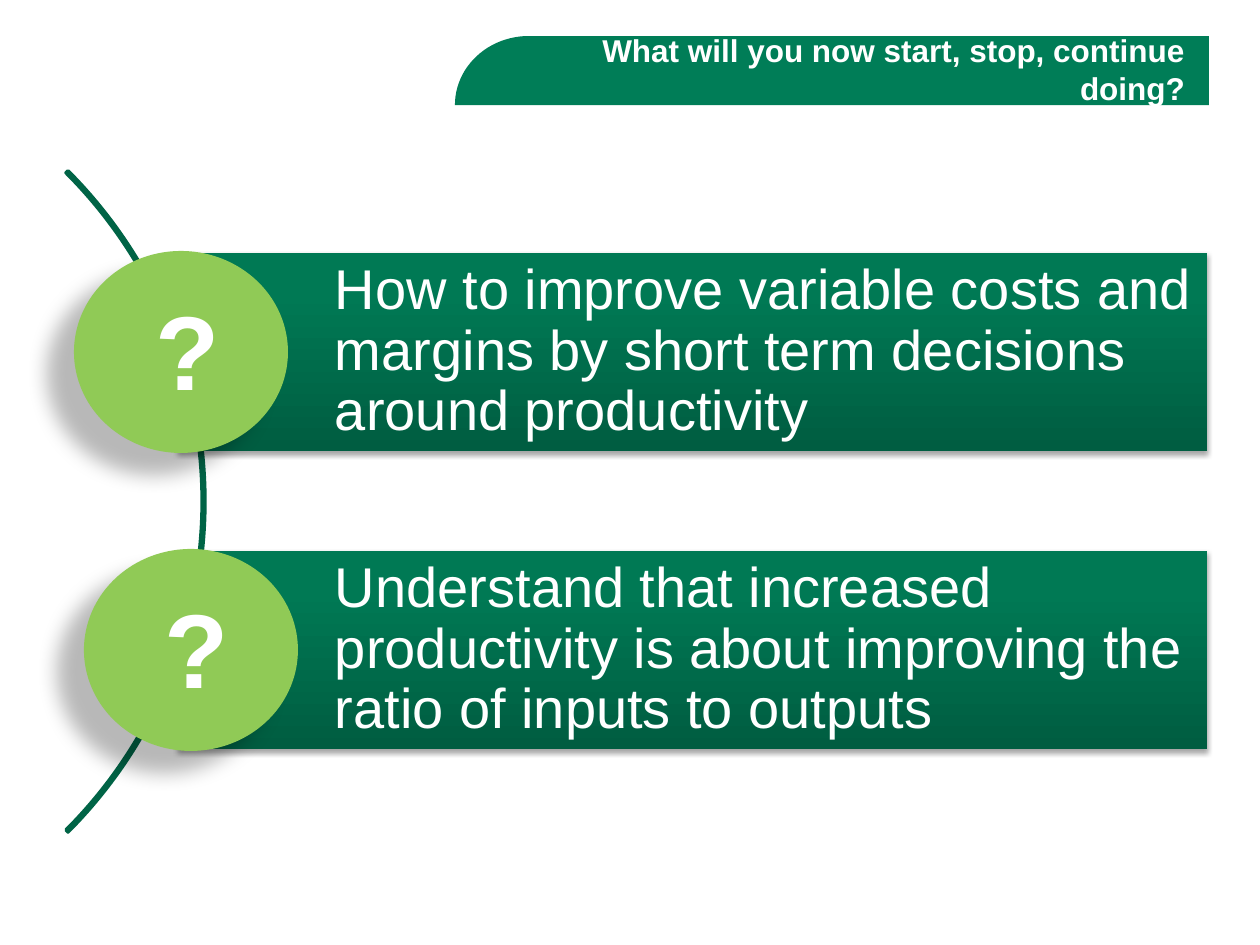
"""Build the slide of two learning points hung on a curved line."""
from copy import deepcopy
from dataclasses import dataclass
from math import cos, pi, sin
from typing import Optional

from lxml import etree
from pptx import Presentation
from pptx.dml.color import RGBColor
from pptx.enum.shapes import MSO_SHAPE
from pptx.enum.text import MSO_ANCHOR, PP_ALIGN
from pptx.oxml.ns import qn
from pptx.util import Emu, Pt

RECTANGLE, OVAL, BLOCK_ARC = MSO_SHAPE.RECTANGLE, MSO_SHAPE.OVAL, MSO_SHAPE.BLOCK_ARC
TOP, MIDDLE = MSO_ANCHOR.TOP, MSO_ANCHOR.MIDDLE
LEFT, RIGHT = PP_ALIGN.LEFT, PP_ALIGN.RIGHT

WHITE = RGBColor(0xFF, 0xFF, 0xFF)
HEADER_GREEN = RGBColor(0x00, 0x7D, 0x57)
ARC_GREEN = RGBColor(0x00, 0x64, 0x46)
LIME = RGBColor(0x90, 0xCA, 0x56)
BAR_STOPS = (
    (0.0, RGBColor(0x00, 0x5D, 0x41)),
    (0.8, RGBColor(0x00, 0x79, 0x54)),
    (1.0, RGBColor(0x00, 0x7A, 0x55)),
)
EMU_PER_PX = 914400 / 126
FONT = "Arial"
BAR_HEIGHT = 198
FIRST_BAR_TOP, BAR_PITCH = 253, 298


@dataclass(frozen=True)
class Box:
    left: int
    top: int
    width: int
    height: int

    def emu(self) -> tuple:
        return tuple(px(n) for n in (self.left, self.top, self.width, self.height))


@dataclass(frozen=True)
class Shadow:
    alpha: int
    blur: float
    distance: float
    direction: int


@dataclass(frozen=True)
class Point:
    text: str
    circle_left: int


BAR_SHADOW = Shadow(35, 3.1, 1.8, 90)
CIRCLE_SHADOW = Shadow(28, 11.8, 19.7, 141)
POINTS = (
    Point("How to improve variable costs and margins by short term decisions around productivity", 74),
    Point("Understand that increased productivity is about improving the ratio of inputs to outputs", 84),
)


def px(length: float) -> Emu:
    return Emu(round(length * EMU_PER_PX))


def set_shadow(shape, shadow: Optional[Shadow]) -> None:
    shape.shadow.inherit = False
    if shadow is None:
        return
    effects = shape._element.spPr.find(qn("a:effectLst"))
    outer = etree.SubElement(
        effects, qn("a:outerShdw"), blurRad=str(Pt(shadow.blur)), dist=str(Pt(shadow.distance)),
        dir=str(shadow.direction * 60000), algn="ctr", rotWithShape="0")
    color = etree.SubElement(outer, qn("a:srgbClr"), val="000000")
    etree.SubElement(color, qn("a:alpha"), val=str(shadow.alpha * 1000))


def add_solid(slide, kind, box: Box, color: RGBColor, shadow: Optional[Shadow] = None):
    shape = slide.shapes.add_shape(kind, *box.emu())
    shape.fill.solid()
    shape.fill.fore_color.rgb = color
    shape.line.fill.background()
    set_shadow(shape, shadow)
    return shape


def write_text(shape, text: str, *, size: int, bold: bool = False, align=LEFT, anchor=TOP,
               insets: tuple = (13, 6, 13, 6), spacing: float = 1.0) -> None:
    frame = shape.text_frame
    frame.word_wrap = True
    frame.vertical_anchor = anchor
    frame.margin_left, frame.margin_top, frame.margin_right, frame.margin_bottom = map(px, insets)
    paragraph = frame.paragraphs[0]
    paragraph.alignment = align
    paragraph.line_spacing = spacing
    run = paragraph.add_run()
    run.text = text
    run.font.name = FONT
    run.font.size = Pt(size)
    run.font.bold = bold
    run.font.color.rgb = WHITE


def add_header(slide) -> None:
    left, top, right, bottom = 455, 36, 1209, 105
    radius_x, radius_y = 74, bottom - top
    steps = 24
    angles = [pi / 2 * step / steps for step in range(1, steps + 1)]
    corner = [(px(left + radius_x * (1 - cos(angle))), px(bottom - radius_y * sin(angle)))
              for angle in angles]
    builder = slide.shapes.build_freeform(px(left), px(bottom))
    builder.add_line_segments(corner + [(px(right), px(top)), (px(right), px(bottom))], close=True)
    banner = builder.convert_to_shape()
    banner.fill.solid()
    banner.fill.fore_color.rgb = HEADER_GREEN
    banner.line.fill.background()
    set_shadow(banner, None)
    title = slide.shapes.add_textbox(*Box(530, 39, 655, 59).emu())
    write_text(title, "What will you now start, stop, continue doing?", size=18, bold=True,
               align=RIGHT, anchor=MIDDLE, insets=(0, 6, 0, 6))


def add_arc(slide) -> None:
    arc = add_solid(slide, BLOCK_ARC, Box(-730, 34, 935, 935), ARC_GREEN)
    for index, value in enumerate((189, 27, 0.003)):
        arc.adjustments[index] = value
    arc.line.color.rgb = ARC_GREEN
    arc.line.width = Pt(2)


def add_bar(slide, top: int, text: str) -> None:
    bar = add_solid(slide, RECTANGLE, Box(178, top, 1029, BAR_HEIGHT), HEADER_GREEN, BAR_SHADOW)
    bar.fill.gradient()
    bar.fill.gradient_angle = 90
    stop_list = bar._element.spPr.find(".//" + qn("a:gsLst"))
    stop_list.append(deepcopy(stop_list[-1]))
    for stop, (position, color) in zip(bar.fill.gradient_stops, BAR_STOPS):
        stop.position = position
        stop.color.rgb = color
    write_text(bar, text, size=32, anchor=MIDDLE, insets=(157, 11, 11, 11), spacing=0.9)


def add_question(slide, left: int, top: int) -> None:
    add_solid(slide, OVAL, Box(left, top, 214, 202), LIME, CIRCLE_SHADOW)
    mark = slide.shapes.add_textbox(*Box(left + 68, top + 29, 171, 140).emu())
    write_text(mark, "?", size=60, bold=True)


def main() -> None:
    presentation = Presentation()
    presentation.slide_width, presentation.slide_height = px(1260), px(945)
    slide = presentation.slides.add_slide(presentation.slide_layouts[6])
    add_header(slide)
    add_arc(slide)
    tops = [FIRST_BAR_TOP + BAR_PITCH * index for index in range(len(POINTS))]
    for point, top in zip(POINTS, tops):
        add_bar(slide, top, point.text)
    for point, top in zip(POINTS, tops):
        add_question(slide, point.circle_left, top - 2)
    presentation.save("out.pptx")


if __name__ == "__main__":
    main()
